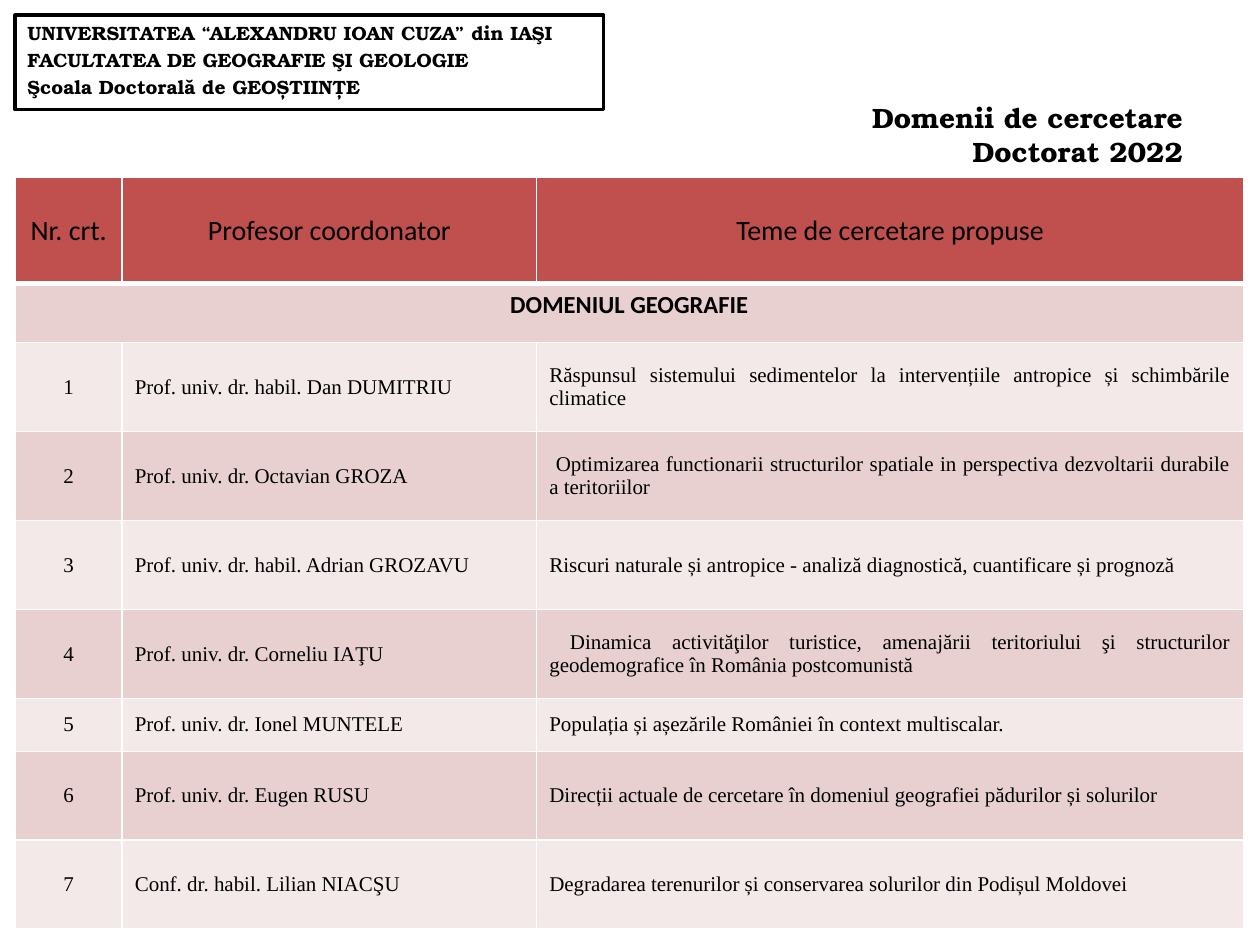
from dataclasses import dataclass

from lxml import etree
from pptx import Presentation
from pptx import util as u
from pptx.dml.color import RGBColor
from pptx.enum import shapes, text
from pptx.oxml.ns import qn

BLACK = RGBColor(0x00, 0x00, 0x00)
WHITE = RGBColor(0xFF, 0xFF, 0xFF)
HEADER_RED = RGBColor(0xC0, 0x50, 0x4D)
BAND_DARK = RGBColor(0xE8, 0xD0, 0xD0)
BAND_LIGHT = RGBColor(0xF4, 0xE9, 0xE9)

SERIF_DISPLAY = "TeX Gyre Bonum"
SANS = "Calibri"
SERIF = "Times New Roman"

CENTER = text.PP_ALIGN.CENTER
JUSTIFY = text.PP_ALIGN.JUSTIFY
MIDDLE = text.MSO_ANCHOR.MIDDLE
TOP = text.MSO_ANCHOR.TOP

SLIDE_WIDTH, SLIDE_HEIGHT = u.Inches(10), u.Inches(7.5)
MARGIN = 0.12
COLUMN_WIDTHS = (0.85, 3.29, 5.61)
HEADER_HEIGHT, DOMAIN_HEIGHT = 0.84, 0.47
TALL_ROW, SHORT_ROW = 0.706, 0.42


@dataclass(frozen=True)
class Topic:
    professor: str
    theme: str
    height: float = TALL_ROW


INSTITUTION = (
    "UNIVERSITATEA “ALEXANDRU IOAN CUZA” din IAŞI",
    "FACULTATEA DE GEOGRAFIE ŞI GEOLOGIE",
    "Şcoala Doctorală de GEOȘTIINȚE",
)
TITLE = ("Domenii de cercetare", "Doctorat 2022")
HEADERS = ("Nr. crt.", "Profesor coordonator", "Teme de cercetare propuse")
DOMAIN = "DOMENIUL GEOGRAFIE"
TOPICS = (
    Topic("Prof. univ. dr. habil. Dan DUMITRIU",
          "Răspunsul sistemului sedimentelor la intervențiile antropice și schimbările climatice"),
    Topic("Prof. univ. dr. Octavian GROZA",
          " Optimizarea functionarii structurilor spatiale in perspectiva dezvoltarii durabile a teritoriilor"),
    Topic("Prof. univ. dr. habil. Adrian GROZAVU",
          "Riscuri naturale și antropice - analiză diagnostică, cuantificare și prognoză"),
    Topic("Prof. univ. dr. Corneliu IAŢU",
          " Dinamica activităţilor turistice, amenajării teritoriului şi structurilor geodemografice în România postcomunistă"),
    Topic("Prof. univ. dr. Ionel MUNTELE",
          "Populația și așezările României în context multiscalar.", SHORT_ROW),
    Topic("Prof. univ. dr. Eugen RUSU",
          "Direcții actuale de cercetare în domeniul geografiei pădurilor și solurilor"),
    Topic("Conf. dr. habil. Lilian NIACŞU",
          "Degradarea terenurilor și conservarea solurilor din Podișul Moldovei"),
)


def write_text(frame, lines: tuple[str, ...], *, size: float, font: str,
               bold: bool = False, align=text.PP_ALIGN.LEFT,
               anchor=MIDDLE, space_before: float = 0) -> None:
    frame.word_wrap = True
    frame.vertical_anchor = anchor
    for index, line in enumerate(lines):
        paragraph = frame.paragraphs[0] if index == 0 else frame.add_paragraph()
        paragraph.alignment = align
        paragraph.space_before = u.Pt(space_before)
        run = paragraph.add_run()
        run.text = line
        run.font.size = u.Pt(size)
        run.font.name = font
        run.font.bold = bold
        run.font.color.rgb = BLACK


def set_borders(cell, bottom: float = 1) -> None:
    properties = cell._tc.get_or_add_tcPr()
    widths = {"a:lnL": 1, "a:lnR": 1, "a:lnT": 1, "a:lnB": bottom}
    for index, (tag, width) in enumerate(widths.items()):
        line = etree.Element(qn(tag), w=str(u.Pt(width)))
        fill = etree.SubElement(line, qn("a:solidFill"))
        etree.SubElement(fill, qn("a:srgbClr"), val=str(WHITE))
        properties.insert(index, line)


def fill_cell(cell, content: str, color: RGBColor, *, bottom: float = 1, **style) -> None:
    cell.fill.solid()
    cell.fill.fore_color.rgb = color
    set_borders(cell, bottom)
    anchor = style.pop("anchor", MIDDLE)
    write_text(cell.text_frame, (content,), **style)
    cell.vertical_anchor = anchor


def add_institution(slide) -> None:
    box = slide.shapes.add_shape(
        shapes.MSO_SHAPE.RECTANGLE, u.Inches(MARGIN), u.Inches(MARGIN),
        u.Inches(4.67), u.Inches(0.75))
    box.shadow.inherit = False
    box.fill.solid()
    box.fill.fore_color.rgb = WHITE
    box.line.color.rgb = BLACK
    box.line.width = u.Pt(2)
    write_text(box.text_frame, INSTITUTION, size=11, font=SERIF_DISPLAY,
               bold=True, anchor=TOP, space_before=2.2)


def add_title(slide) -> None:
    title = slide.shapes.title
    title.left, title.top = 0, u.Inches(0.75)
    title.width, title.height = u.Inches(9.49), u.Inches(0.64)
    write_text(title.text_frame, TITLE, size=16, font=SERIF_DISPLAY,
               bold=True, align=text.PP_ALIGN.RIGHT, anchor=TOP)
    title.text_frame.auto_size = text.MSO_AUTO_SIZE.NONE


def add_topics(slide) -> None:
    heights = (HEADER_HEIGHT, DOMAIN_HEIGHT, *(topic.height for topic in TOPICS))
    table = slide.shapes.add_table(
        len(heights), len(COLUMN_WIDTHS), u.Inches(MARGIN), u.Inches(1.41),
        u.Inches(sum(COLUMN_WIDTHS)), u.Inches(sum(heights))).table
    for column, width in zip(table.columns, COLUMN_WIDTHS):
        column.width = u.Inches(width)
    for row, height in zip(table.rows, heights):
        row.height = u.Inches(height)

    for column, header in enumerate(HEADERS):
        fill_cell(table.cell(0, column), header, HEADER_RED, bottom=3,
                  size=16, font=SANS, align=CENTER)

    domain = table.cell(1, 0)
    domain.merge(table.cell(1, len(COLUMN_WIDTHS) - 1))
    fill_cell(domain, DOMAIN, BAND_DARK, size=14, font=SANS, bold=True,
              align=CENTER, anchor=TOP)

    for number, topic in enumerate(TOPICS, start=1):
        color = BAND_LIGHT if number % 2 else BAND_DARK
        for column, content in enumerate((str(number), topic.professor, topic.theme)):
            fill_cell(table.cell(number + 1, column), content, color, size=12,
                      font=SERIF, align=JUSTIFY if column else CENTER)


def main() -> None:
    presentation = Presentation()
    presentation.slide_width, presentation.slide_height = SLIDE_WIDTH, SLIDE_HEIGHT
    slide = presentation.slides.add_slide(presentation.slide_layouts[5])
    add_institution(slide)
    add_topics(slide)
    add_title(slide)
    presentation.save("out.pptx")


if __name__ == "__main__":
    main()
